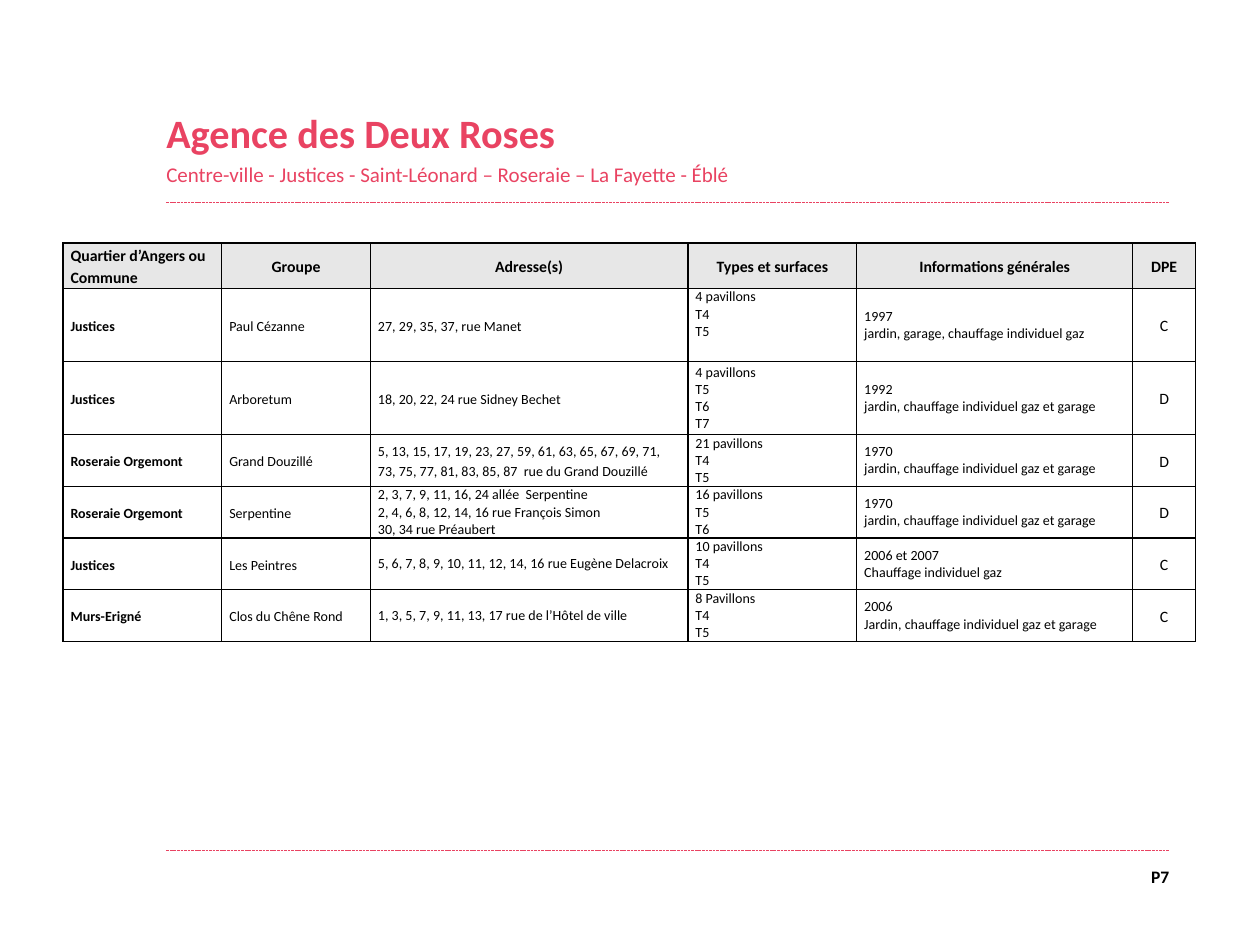
from lxml import etree
from pptx import Presentation
from pptx.dml.color import RGBColor
from pptx.enum.dml import MSO_LINE
from pptx.enum.shapes import MSO_CONNECTOR
from pptx.enum.text import MSO_ANCHOR, MSO_AUTO_SIZE, PP_ALIGN
from pptx.oxml.ns import qn
from pptx.util import Inches, Pt

LEFT, CENTER, RIGHT = PP_ALIGN.LEFT, PP_ALIGN.CENTER, PP_ALIGN.RIGHT
TOP, MIDDLE, BOTTOM = MSO_ANCHOR.TOP, MSO_ANCHOR.MIDDLE, MSO_ANCHOR.BOTTOM
STRAIGHT = MSO_CONNECTOR.STRAIGHT
DASH = MSO_LINE.SQUARE_DOT
NO_AUTOFIT = MSO_AUTO_SIZE.NONE

FONT = "Calibri"
COLORS = {"rose": "E94362", "ink": "000000", "header": "E7E7E7"}
MARGIN_LEFT, MARGIN_RIGHT = 1.32, 9.28

COLUMN_WIDTHS = [1.26, 1.18, 2.52, 1.34, 2.19, 0.5]
ROW_HEIGHTS = [0.36, 0.58, 0.58] + [0.41] * 4
HEADERS = ["Quartier d’Angers ou Commune", "Groupe", "Adresse(s)",
           "Types et surfaces", "Informations générales", "DPE"]
HOMES = [
    ["Justices", "Paul Cézanne", "27, 29, 35, 37, rue Manet",
     "4 pavillons\nT4\nT5",
     "1997\njardin, garage, chauffage individuel gaz", "C"],
    ["Justices", "Arboretum", "18, 20, 22, 24 rue Sidney Bechet",
     "4 pavillons\nT5\nT6\nT7",
     "1992\njardin, chauffage individuel gaz et garage", "D"],
    ["Roseraie Orgemont", "Grand Douzillé",
     "5, 13, 15, 17, 19, 23, 27, 59, 61, 63, 65, 67, 69, 71, "
     "73, 75, 77, 81, 83, 85, 87  rue du Grand Douzillé",
     "21 pavillons\nT4\nT5",
     "1970\njardin, chauffage individuel gaz et garage", "D"],
    ["Roseraie Orgemont", "Serpentine",
     "2, 3, 7, 9, 11, 16, 24 allée  Serpentine\n"
     "2, 4, 6, 8, 12, 14, 16 rue François Simon\n30, 34 rue Préaubert",
     "16 pavillons\nT5\nT6",
     "1970\njardin, chauffage individuel gaz et garage", "D"],
    ["Justices", "Les Peintres",
     "5, 6, 7, 8, 9, 10, 11, 12, 14, 16 rue Eugène Delacroix",
     "10 pavillons\nT4\nT5", "2006 et 2007\nChauffage individuel gaz", "C"],
    ["Murs-Erigné", "Clos du Chêne Rond",
     "1, 3, 5, 7, 9, 11, 13, 17 rue de l’Hôtel de ville",
     "8 Pavillons\nT4\nT5",
     "2006\nJardin, chauffage individuel gaz et garage", "C"],
]


def color(name):
    return RGBColor.from_string(COLORS[name])


def write(para, text, size=8, bold=False, ink="ink", align=LEFT,
          spacing=1.0, before=0):
    """Put formatted text into a paragraph."""
    para.alignment = align
    para.line_spacing = spacing
    para.space_before = Pt(before)
    span = para.add_run()
    span.text = text
    span.font.name = FONT
    span.font.size = Pt(size)
    span.font.bold = bold
    span.font.color.rgb = color(ink)


class SlideBuilder:
    def __init__(self, deck):
        self.page = deck.slides.add_slide(deck.slide_layouts[5])

    def frame(self, box, anchor):
        """Clear the insets of a box and return its text frame."""
        frame = box.text_frame
        frame.margin_left = frame.margin_right = 0
        frame.margin_top = frame.margin_bottom = 0
        frame.word_wrap = True
        frame.auto_size = NO_AUTOFIT
        frame.vertical_anchor = anchor
        return frame

    def title(self, title, subtitle):
        box = self.page.shapes.title
        box.left, box.top = Inches(MARGIN_LEFT), Inches(0.73)
        box.width, box.height = Inches(6.24), Inches(0.75)
        frame = self.frame(box, BOTTOM)
        write(frame.paragraphs[0], title, size=23, bold=True, ink="rose")
        write(frame.add_paragraph(), subtitle, size=12, ink="rose", before=2.4)

    def rule(self, y):
        line = self.page.shapes.add_connector(
            STRAIGHT, Inches(MARGIN_LEFT), Inches(y),
            Inches(MARGIN_RIGHT), Inches(y))
        line.line.color.rgb = color("rose")
        line.line.width = Pt(0.5)
        line.line.dash_style = DASH
        etree.SubElement(line.element.spPr, qn("a:effectLst"))

    def page_number(self, text):
        width = 0.34
        box = self.page.shapes.add_textbox(
            Inches(MARGIN_RIGHT - width), Inches(6.87),
            Inches(width), Inches(0.2))
        write(self.frame(box, TOP).paragraphs[0], text,
              size=10, bold=True, align=RIGHT)

    def cell(self, cell, text, fill=None, anchor=MIDDLE, **style):
        cell.margin_left = cell.margin_right = Inches(0.06)
        cell.margin_top = cell.margin_bottom = 0
        cell.vertical_anchor = anchor
        frame = cell.text_frame
        for index, line in enumerate(text.split("\n")):
            para = frame.add_paragraph() if index else frame.paragraphs[0]
            write(para, line, **style)
        # Borders come before the fill in the cell properties
        properties = cell._tc.get_or_add_tcPr()
        for side in ("lnL", "lnR", "lnT", "lnB"):
            border = etree.SubElement(properties, qn(f"a:{side}"),
                                      w=str(Pt(1)))
            solid = etree.SubElement(border, qn("a:solidFill"))
            etree.SubElement(solid, qn("a:srgbClr"), val=COLORS["ink"])
        if fill:
            cell.fill.solid()
            cell.fill.fore_color.rgb = color(fill)
        else:
            cell.fill.background()

    def table(self, left, top):
        table = self.page.shapes.add_table(
            len(ROW_HEIGHTS), len(COLUMN_WIDTHS), Inches(left), Inches(top),
            Inches(sum(COLUMN_WIDTHS)), Inches(sum(ROW_HEIGHTS))).table
        table.horz_banding = False
        for column, width in zip(table.columns, COLUMN_WIDTHS):
            column.width = Inches(width)
        for row, height in zip(table.rows, ROW_HEIGHTS):
            row.height = Inches(height)

        # Header row
        for col, text in enumerate(HEADERS):
            self.cell(table.cell(0, col), text, fill="header", size=9,
                      bold=True, spacing=1.15,
                      align=CENTER if col else LEFT)

        # One row per group of homes
        for row, home in enumerate(HOMES, start=1):
            for col, text in enumerate(home):
                is_rating = col == 5
                loose = col in (0, 1, 5) or (col == 2 and row <= 3)
                self.cell(table.cell(row, col), text,
                          size=9 if is_rating else 8, bold=col == 0,
                          align=CENTER if is_rating else LEFT,
                          spacing=1.15 if loose else 1.0,
                          anchor=TOP if (row, col) == (1, 3) else MIDDLE)


def main():
    deck = Presentation()
    deck.slide_width, deck.slide_height = Inches(10), Inches(7.5)
    builder = SlideBuilder(deck)

    # Page frame
    builder.rule(1.61)
    builder.rule(6.75)
    builder.page_number("P7")

    # Content
    builder.title(
        "Agence des Deux Roses",
        "Centre-ville - Justices - Saint-Léonard – Roseraie – La Fayette - Éblé")
    builder.table(0.5, 1.93)
    deck.save("out.pptx")


if __name__ == "__main__":
    main()
